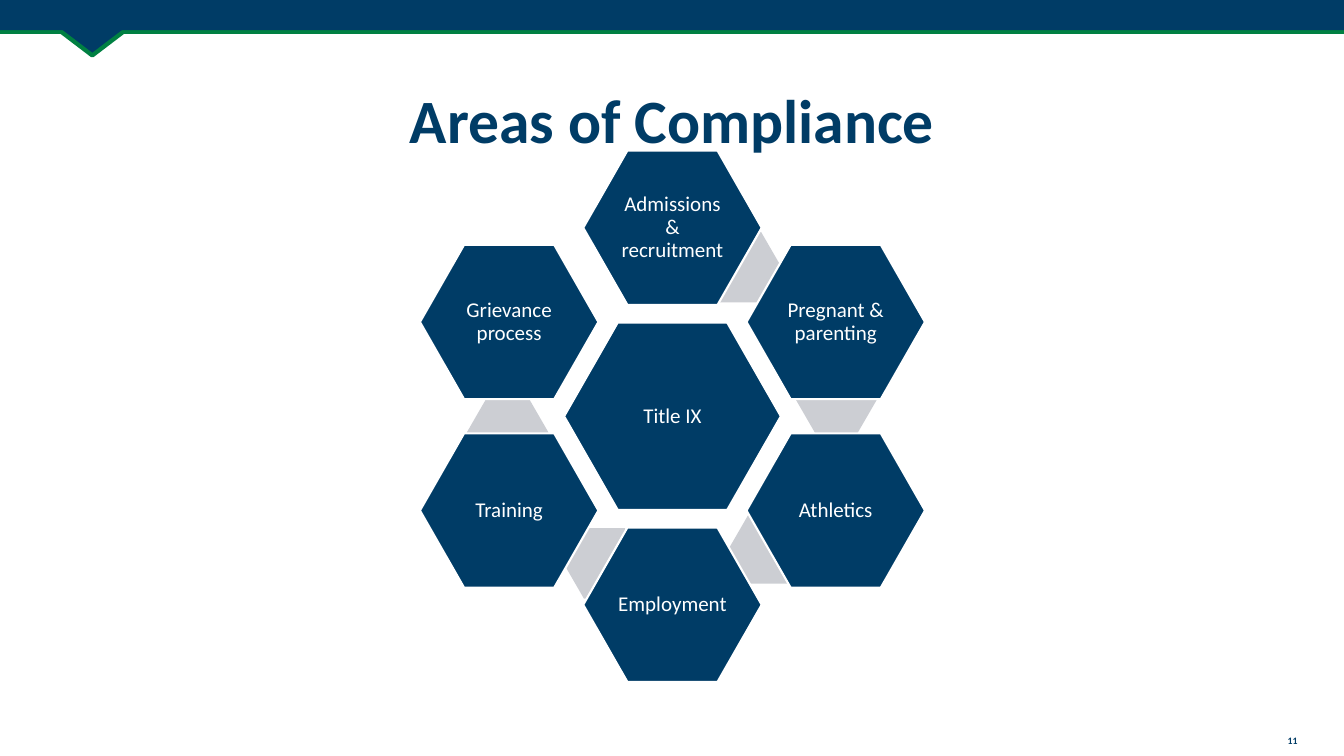
from dataclasses import dataclass
from math import cos, radians, sin

from lxml.etree import SubElement
from pptx import Presentation
from pptx.dml.color import RGBColor
from pptx.enum.shapes import MSO_CONNECTOR, MSO_SHAPE
from pptx.enum.text import MSO_ANCHOR, PP_ALIGN
from pptx.oxml.ns import qn
from pptx.shapes.autoshape import Shape
from pptx.slide import Slide
from pptx.util import Inches, Pt

NAVY = RGBColor(0x00, 0x3C, 0x66)
GREEN = RGBColor(0x00, 0x80, 0x42)
GREY = RGBColor(0xCC, 0xCE, 0xD3)
WHITE = RGBColor(0xFF, 0xFF, 0xFF)

WIDTH, HEIGHT = 13.33, 7.5
MID_X, MID_Y, RING = 6.67, 4.13, 1.87
AREAS = ["Admissions & recruitment", "Pregnant & parenting", "Athletics",
         "Employment", "Training", "Grievance process"]
LINKS = [(6.94, 2.3), (7.89, 3.61), (7.23, 5.09), (5.59, 5.24), (4.63, 3.94)]


@dataclass
class Box:
    left: float
    top: float
    width: float
    height: float

    def place(self) -> list[int]:
        return [Inches(n) for n in (self.left, self.top, self.width, self.height)]


@dataclass
class Hex:
    box: Box
    text: str


def put_text(shape: Shape, text: str, size: float, color: RGBColor,
             bold: bool = False, inset: float = 0.05) -> None:
    frame = shape.text_frame
    edge = Inches(inset)
    form = {"word_wrap": True, "vertical_anchor": MSO_ANCHOR.MIDDLE,
            "margin_left": edge, "margin_right": edge,
            "margin_top": edge, "margin_bottom": edge}
    for name, value in form.items():
        setattr(frame, name, value)
    line = frame.paragraphs[0]
    line.text = text
    line.alignment = PP_ALIGN.CENTER
    line.line_spacing = 0.9
    font = line.runs[0].font
    for name, value in {"name": "Calibri", "size": Pt(size), "bold": bold}.items():
        setattr(font, name, value)
    font.color.rgb = color


def add_form(slide: Slide, kind: MSO_SHAPE, box: Box, fill: RGBColor,
             edge: RGBColor | None = None, weight: float = 0) -> Shape:
    shape = slide.shapes.add_shape(kind, *box.place())
    shape.shadow.inherit = False
    shape.fill.solid()
    shape.fill.fore_color.rgb = fill
    if edge is None:
        shape.line.fill.background()
    else:
        shape.line.color.rgb = edge
        shape.line.width = Pt(weight)
    return shape


def add_hex(slide: Slide, item: Hex) -> None:
    shape = add_form(slide, MSO_SHAPE.HEXAGON, item.box, NAVY, WHITE, 1.5)
    shape.adjustments[0] = 0.286
    put_text(shape, item.text, 15, WHITE, inset=0.04)


def add_label(slide: Slide, box: Box, text: str, size: float) -> None:
    put_text(slide.shapes.add_textbox(*box.place()), text, size, NAVY, bold=True)


def add_band(slide: Slide) -> None:
    rule = slide.shapes.add_connector(
        MSO_CONNECTOR.STRAIGHT, 0, Inches(0.32), Inches(WIDTH), Inches(0.32))
    rule.line.color.rgb = GREEN
    rule.line.width = Pt(3)
    SubElement(rule._element.spPr, qn("a:effectLst"))
    notch = add_form(slide, MSO_SHAPE.ISOSCELES_TRIANGLE,
                     Box(0.39, 0.15, 1.05, 0.4), NAVY, GREEN, 3)
    notch.rotation = 180
    add_form(slide, MSO_SHAPE.RECTANGLE, Box(0, 0, WIDTH, 0.3), NAVY)


def hex_at(text: str, x: float, y: float, width: float, height: float) -> Hex:
    return Hex(Box(x - width / 2, y - height / 2, width, height), text)


def ring_hex(index: int, text: str) -> Hex:
    angle = radians(60 * index)
    return hex_at(text, MID_X + RING * sin(angle), MID_Y - RING * cos(angle), 1.77, 1.53)


def main() -> None:
    deck = Presentation()
    deck.slide_width, deck.slide_height = Inches(WIDTH), Inches(HEIGHT)
    slide = deck.slides.add_slide(deck.slide_layouts[6])
    add_band(slide)
    add_label(slide, Box(12.57, 7.24, 0.5, 0.22), "11", 7)
    add_label(slide, Box(0.92, 0.5, 11.5, 1.45), "Areas of Compliance", 44)
    for left, top in LINKS:
        link = add_form(slide, MSO_SHAPE.HEXAGON, Box(left, top, 0.81, 0.7), GREY)
        link.adjustments[0] = 0.289
    add_hex(slide, hex_at("Title IX", MID_X, MID_Y, 2.15, 1.86))
    for index, text in enumerate(AREAS):
        add_hex(slide, ring_hex(index, text))
    deck.save("out.pptx")


if __name__ == "__main__":
    main()
